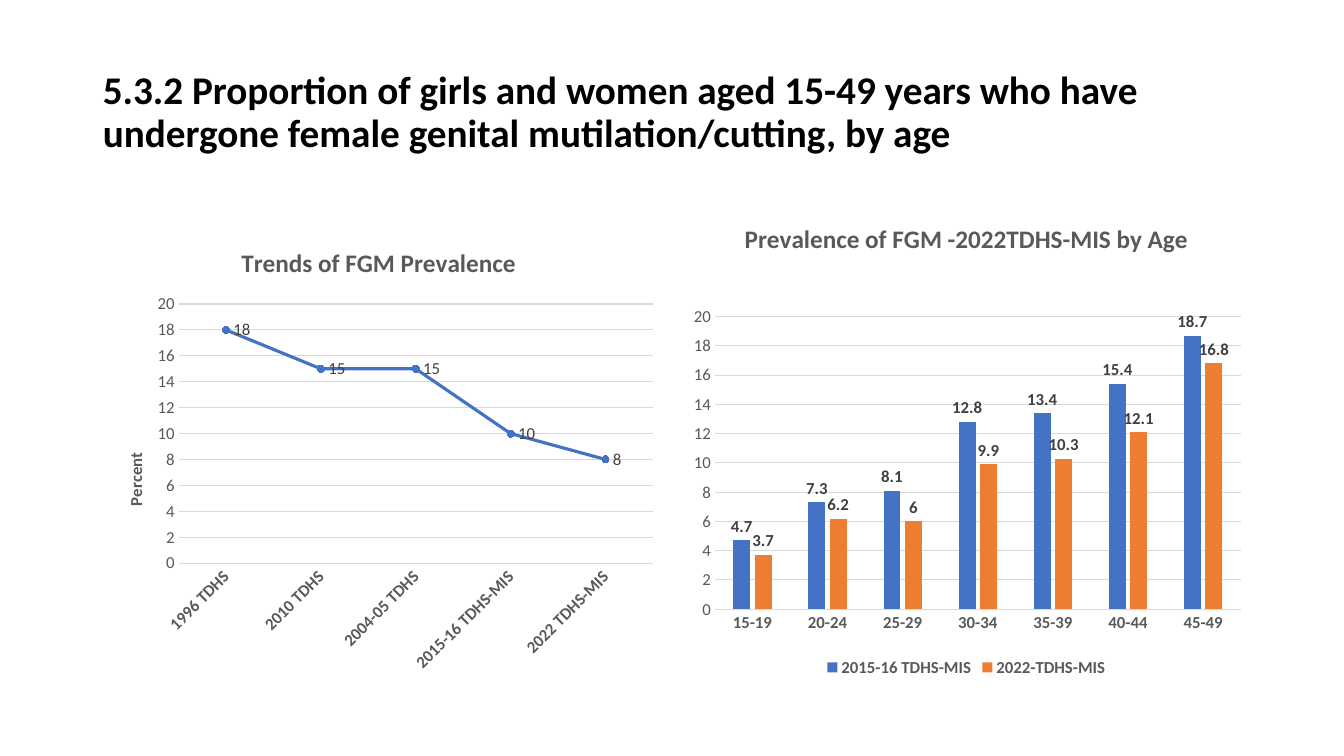
from pptx import Presentation
from pptx.chart.data import CategoryChartData as ChartData
from pptx.dml.color import RGBColor
from pptx.enum.chart import XL_CHART_TYPE as Kind, XL_LABEL_POSITION as LabelSpot
from pptx.enum.chart import XL_LEGEND_POSITION as LegendSpot, XL_MARKER_STYLE as Marker
from pptx.enum.chart import XL_TICK_MARK as Tick
from pptx.enum.text import MSO_ANCHOR as Anchor, MSO_AUTO_SIZE as AutoSize, PP_ALIGN as Align
from pptx.oxml import parse_xml
from pptx.oxml.ns import nsdecls, qn
from pptx.util import Inches, Pt

BLACK = RGBColor(0x00, 0x00, 0x00)
GREY = RGBColor(0x59, 0x59, 0x59)
DARK = RGBColor(0x40, 0x40, 0x40)
RULE = RGBColor(0xD9, 0xD9, 0xD9)
BLUE = RGBColor(0x44, 0x72, 0xC4)
ORANGE = RGBColor(0xED, 0x7D, 0x31)
MARGIN, CHART_WIDTH, CHART_BOTTOM = 0.92, 5.67, 6.76


def set_font(font, size, color, bold=False):
    font.name, font.size, font.bold = "Calibri", Pt(size), bold
    font.color.rgb = color


def set_layout(element, **shares):
    """Place a chart part by shares of the chart's width and height."""
    old = element.find(qn("c:layout"))
    index = 0
    if old is not None:
        index = element.index(old)
        element.remove(old)
    inner = '<c:layoutTarget val="inner"/>' if "w" in shares else ""
    modes = '<c:xMode val="edge"/><c:yMode val="edge"/>'
    values = "".join(f'<c:{name} val="{share}"/>' for name, share in shares.items())
    element.insert(index, parse_xml(
        f'<c:layout {nsdecls("c")}><c:manualLayout>{inner}{modes}{values}'
        "</c:manualLayout></c:layout>"))


deck = Presentation()
deck.slide_width, deck.slide_height = Inches(13.33), Inches(7.5)
page = deck.slides.add_slide(deck.slide_layouts[5])

heading = page.shapes.title
heading.left, heading.top = Inches(MARGIN), Inches(0.4)
heading.width, heading.height = Inches(11.5), Inches(1.45)
frame = heading.text_frame
frame.text = ("5.3.2 Proportion of girls and women aged 15-49 years who have "
              "undergone female genital mutilation/cutting, by age")
frame.word_wrap, frame.auto_size = True, AutoSize.NONE
frame.vertical_anchor = Anchor.MIDDLE
para = frame.paragraphs[0]
para.alignment, para.line_spacing = Align.LEFT, 0.9
set_font(para.runs[0].font, 28, BLACK, True)

CHARTS = [
    dict(kind=Kind.LINE_MARKERS, left=MARGIN, top=2.25, title="Trends of FGM Prevalence",
         groups=["1996 TDHS", "2010 TDHS", "2004-05 TDHS", "2015-16 TDHS-MIS", "2022 TDHS-MIS"],
         series={"Series 1": [18, 15, 15, 10, 8]},
         plot=dict(x=0.15, y=0.17, w=0.83, h=0.57)),
    dict(kind=Kind.COLUMN_CLUSTERED, left=6.75, top=2,
         title="Prevalence of FGM -2022TDHS-MIS by Age",
         groups=["15-19", "20-24", "25-29", "30-34", "35-39", "40-44", "45-49"],
         series={"2015-16 TDHS-MIS": [4.7, 7.3, 8.1, 12.8, 13.4, 15.4, 18.7],
                 "2022-TDHS-MIS": [3.7, 6.2, 6, 9.9, 10.3, 12.1, 16.8]},
         plot=dict(x=0.06, y=0.24, w=0.92, h=0.61)),
]

for item in CHARTS:
    is_line = item["kind"] == Kind.LINE_MARKERS
    data = ChartData()
    data.categories = item["groups"]
    for name, values in item["series"].items():
        data.add_series(name, values)
    chart = page.shapes.add_chart(
        item["kind"], Inches(item["left"]), Inches(item["top"]),
        Inches(CHART_WIDTH), Inches(CHART_BOTTOM - item["top"]), data).chart
    set_font(chart.font, 10, BLACK)
    chart.has_title = True
    chart.chart_title.text_frame.text = item["title"]
    set_font(chart.chart_title.text_frame.paragraphs[0].runs[0].font, 18, GREY, True)
    chart.chart_title.include_in_layout = False
    set_layout(chart.plots[0]._element.getparent(), **item["plot"])

    across, upright = chart.category_axis, chart.value_axis
    for axis in (across, upright):
        axis.major_tick_mark = axis.minor_tick_mark = Tick.NONE
        set_font(axis.tick_labels.font, 12, GREY, axis is across)
    across.format.line.color.rgb = RULE
    across.format.line.width = Pt(0.75)
    upright.format.line.fill.background()
    upright.minimum_scale, upright.maximum_scale, upright.major_unit = 0, 20, 2
    upright.major_gridlines.format.line.color.rgb = RULE
    upright.major_gridlines.format.line.width = Pt(0.75)

    plot = chart.plots[0]
    plot.vary_by_categories = False
    for series, color in zip(plot.series, (BLUE, ORANGE)):
        labels = series.data_labels
        labels.show_value = True
        labels.position = LabelSpot.RIGHT if is_line else LabelSpot.OUTSIDE_END
        set_font(labels.font, 12, DARK, not is_line)
        if is_line:
            series.smooth = False
            series.format.line.color.rgb = color
            series.format.line.width = Pt(2.25)
            series.marker.style, series.marker.size = Marker.CIRCLE, 5
            series.marker.format.fill.solid()
            series.marker.format.fill.fore_color.rgb = color
            series.marker.format.line.color.rgb = color
        else:
            series.format.fill.solid()
            series.format.fill.fore_color.rgb = color

    chart.has_legend = not is_line
    if is_line:
        across._element.find(qn("c:txPr")).find(qn("a:bodyPr")).set("rot", "-2700000")
        upright.axis_title.text_frame.text = "Percent"
        set_font(upright.axis_title.text_frame.paragraphs[0].runs[0].font, 12, GREY, True)
        turned = upright.axis_title.text_frame._txBody.find(qn("a:bodyPr"))
        turned.set("rot", "-5400000")
        turned.set("vert", "horz")
        set_layout(upright.axis_title._element, x=0.05, y=0.49)
    else:
        plot.gap_width, plot.overlap = 219, -27
        chart.legend.position = LegendSpot.BOTTOM
        chart.legend.include_in_layout = False
        set_font(chart.legend.font, 12, GREY, True)

deck.save("out.pptx")
